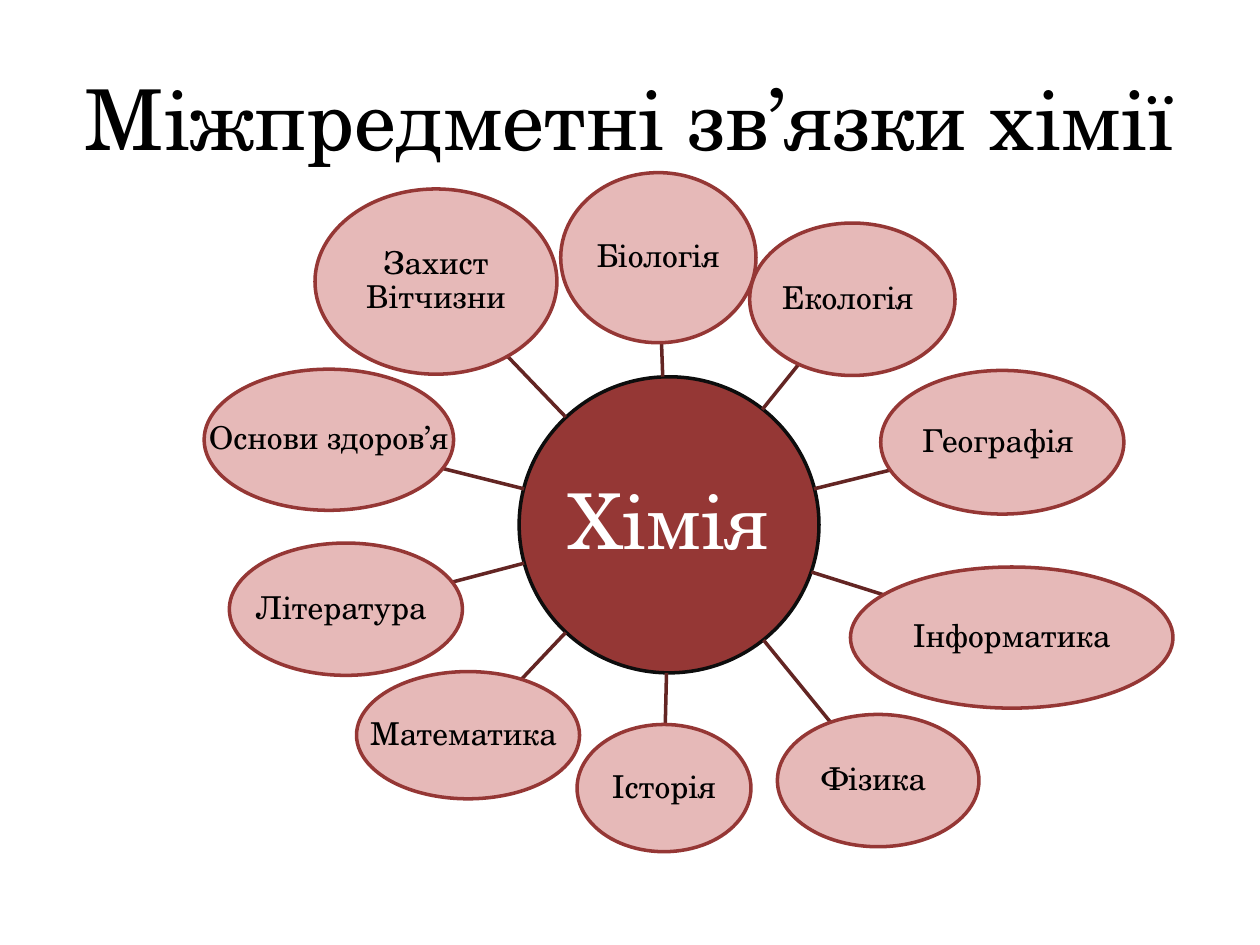
"""Builds a radial slide of the school subjects linked to chemistry."""
from dataclasses import dataclass
from math import hypot

from lxml import etree
from pptx import Presentation
from pptx.dml.color import RGBColor
from pptx.enum.shapes import MSO_CONNECTOR, MSO_SHAPE
from pptx.enum.text import MSO_ANCHOR, MSO_AUTO_SIZE, PP_ALIGN
from pptx.oxml.ns import qn
from pptx.util import Pt

PX = 9144
ELLIPSE = MSO_SHAPE.OVAL
STRAIGHT = MSO_CONNECTOR.STRAIGHT
MIDDLE = MSO_ANCHOR.MIDDLE
CENTER = PP_ALIGN.CENTER
NO_AUTOFIT = MSO_AUTO_SIZE.NONE
TITLE_ONLY = 5

HUB = (412, 299, 238, 235)
SUBJECTS = [
    ("Біологія", (445, 137, 155, 135)),
    ("Екологія ", (595, 177, 163, 121)),
    ("Географія ", (699, 294, 193, 114)),
    ("Інформатика", (675, 450, 256, 112)),
    ("Фізика ", (617, 567, 160, 105)),
    ("Історія", (458, 575, 138, 101)),
    ("Математика ", (283, 533, 177, 101)),
    ("Література ", (182, 431, 185, 105)),
    ("Основи здоров’я", (162, 293, 198, 112)),
    ("Захист Вітчизни", (250, 150, 192, 147)),
]
WRAPPED = {"Захист Вітчизни"}


@dataclass(frozen=True)
class Theme:
    """Colours, font and type sizes of the slide."""
    font: str = "TeX Gyre Schola"
    ink: str = "000000"
    light: str = "FFFFFF"
    hub: str = "953735"
    hub_edge: str = "0D0D0D"
    subject: str = "E6B9B8"
    spoke: str = "632523"
    title_size: int = 48
    hub_size: int = 44
    subject_size: int = 18
    line_width: int = 2


def color(value):
    """Return the RGB colour for a hex string."""
    return RGBColor.from_string(value)


def write(frame, text, *, font, size, ink, spacing=1.0, wrap=True, inset=None):
    """Write one centred paragraph into a text frame."""
    frame.word_wrap = wrap
    frame.auto_size = NO_AUTOFIT
    frame.vertical_anchor = MIDDLE
    if inset is not None:
        frame.margin_left = frame.margin_right = inset * PX
        frame.margin_top = frame.margin_bottom = inset * PX
    paragraph = frame.paragraphs[0]
    paragraph.alignment = CENTER
    paragraph.line_spacing = spacing
    run = paragraph.add_run()
    run.text = text
    run.font.name = font
    run.font.size = Pt(size)
    run.font.color.rgb = color(ink)


def center(box):
    """Return the centre of a box."""
    left, top, width, height = box
    return left + width / 2, top + height / 2


def edge_toward(box, target):
    """Return the point where an ellipse meets the line to another centre."""
    x, y = center(box)
    dx, dy = target[0] - x, target[1] - y
    reach = hypot(dx / (box[2] / 2), dy / (box[3] / 2))
    return round(x + dx / reach), round(y + dy / reach)


class SlideBuilder:
    """Holds the theme and the current slide."""

    def __init__(self, slide, theme):
        """Keep the slide and its theme."""
        self.slide = slide
        self.theme = theme

    def title(self, text, box):
        """Place and fill the title placeholder."""
        theme = self.theme
        shape = self.slide.shapes.title
        shape.left, shape.top, shape.width, shape.height = (n * PX for n in box)
        write(shape.text_frame, text, font=theme.font,
              size=theme.title_size, ink=theme.ink)

    def bubble(self, text, box, *, fill, line, size, ink, wrap=False, inset=1):
        """Add a labelled ellipse."""
        theme = self.theme
        shape = self.slide.shapes.add_shape(ELLIPSE, *(n * PX for n in box))
        shape.shadow.inherit = False
        shape.fill.solid()
        shape.fill.fore_color.rgb = color(fill)
        shape.line.color.rgb = color(line)
        shape.line.width = Pt(theme.line_width)
        write(shape.text_frame, text, font=theme.font, size=size, ink=ink,
              spacing=0.9, wrap=wrap, inset=inset)

    def spoke(self, start_box, end_box):
        """Connect the facing edges of two ellipses."""
        start = edge_toward(start_box, center(end_box))
        end = edge_toward(end_box, center(start_box))
        connector = self.slide.shapes.add_connector(
            STRAIGHT, *(n * PX for n in start + end))
        connector.line.color.rgb = color(self.theme.spoke)
        connector.line.width = Pt(self.theme.line_width)
        etree.SubElement(connector.element.spPr, qn("a:effectLst"))


def main():
    """Build and save the presentation."""
    theme = Theme()
    presentation = Presentation()
    presentation.slide_width, presentation.slide_height = 1000 * PX, 750 * PX
    slide = presentation.slides.add_slide(presentation.slide_layouts[TITLE_ONLY])
    builder = SlideBuilder(slide, theme)
    builder.title("Міжпредметні зв’язки хімії ", (50, 30, 900, 125))
    builder.bubble("Хімія", HUB, fill=theme.hub, line=theme.hub_edge,
                   size=theme.hub_size, ink=theme.light, inset=3)
    for name, box in SUBJECTS:
        builder.spoke(HUB, box)
        builder.bubble(name, box, fill=theme.subject, line=theme.hub,
                       size=theme.subject_size, ink=theme.ink,
                       wrap=name in WRAPPED)
    presentation.save("out.pptx")


if __name__ == "__main__":
    main()
